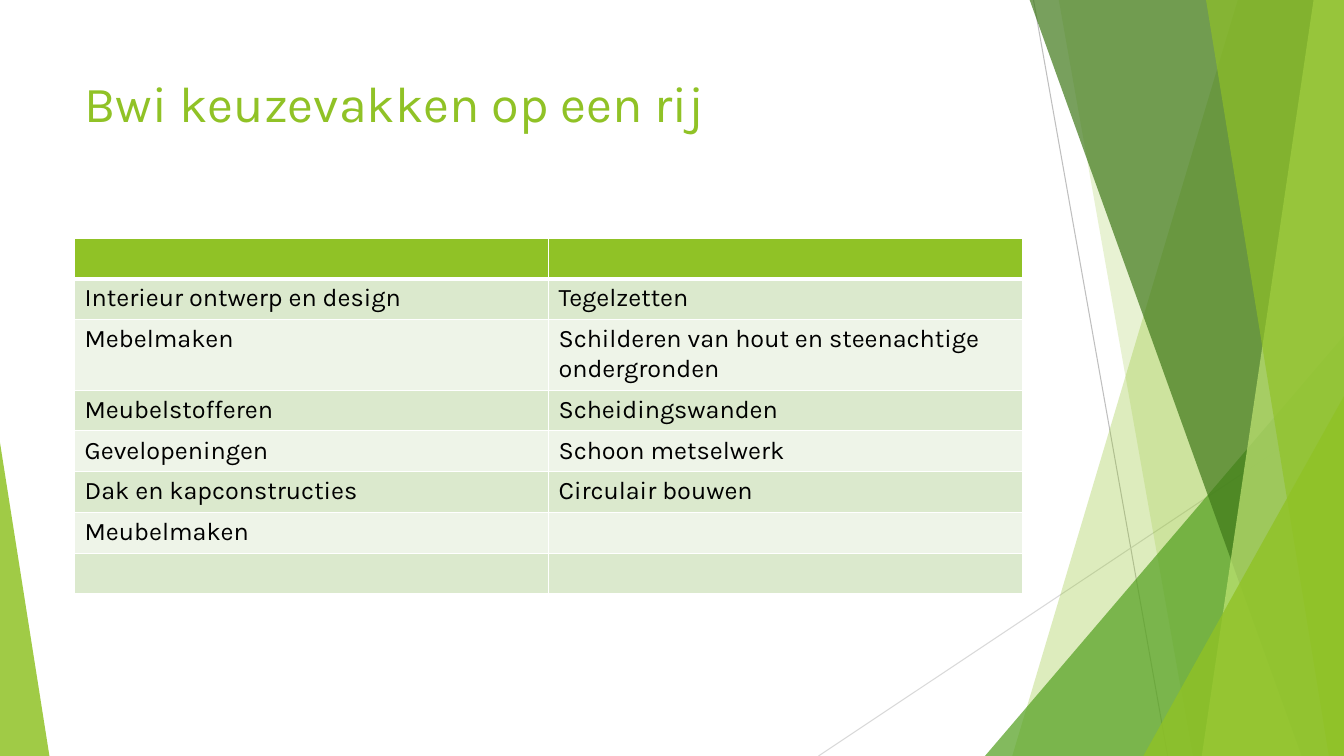
from lxml import etree
from pptx import Presentation
from pptx.dml.color import RGBColor
from pptx.enum.shapes import MSO_CONNECTOR, MSO_SHAPE
from pptx.enum.text import MSO_ANCHOR
from pptx.oxml.ns import qn
from pptx.util import Inches, Pt

STRAIGHT = MSO_CONNECTOR.STRAIGHT
TRIANGLE = MSO_SHAPE.ISOSCELES_TRIANGLE
TOP = MSO_ANCHOR.TOP

COLORS = {
    "lime": "90C226", "green": "54A021", "forest": "3F7819", "pale": "C0E474",
    "band_dark": "DBE9CD", "band_light": "EEF4E8", "white": "FFFFFF",
    "black": "000000", "line_dark": "BFBFBF", "line_light": "D9D9D9",
}
BLEED = -0.13  # the facets start just above the slide

# top left, bottom left, colour, opacity; each runs to the right edge
FACETS_BACK = [(92.12, 75.32, "lime", 30), (78.77, 88.75, "lime", 20)]
FACETS_FRONT = [
    (76.59, 96.85, "forest", 70),
    (97.75, 89.42, "pale", 70),
    (89.72, 98.87, "lime", 65),
]

SUBJECTS = [
    ("", ""),
    ("Interieur ontwerp en design", "Tegelzetten"),
    ("Mebelmaken", "Schilderen van hout en steenachtige ondergronden"),
    ("Meubelstofferen", "Scheidingswanden"),
    ("Gevelopeningen", "Schoon metselwerk"),
    ("Dak en kapconstructies", "Circulair bouwen"),
    ("Meubelmaken", ""),
    ("", ""),
]


def rgb(name):
    return RGBColor.from_string(COLORS[name])


class SlideBuilder:
    """Draws on one slide; lengths are percentages of its width and height."""

    def __init__(self, presentation, font="Karla"):
        self.width = presentation.slide_width
        self.height = presentation.slide_height
        self.font = font
        self.slide = presentation.slides.add_slide(presentation.slide_layouts[6])
        self.shapes = self.slide.shapes

    def x(self, share):
        return round(self.width * share / 100)

    def y(self, share):
        return round(self.height * share / 100)

    def box(self, left, top, width, height):
        return self.x(left), self.y(top), self.x(width), self.y(height)

    def paint(self, shape, color, opacity):
        shape.shadow.inherit = False
        shape.line.fill.background()
        shape.fill.solid()
        shape.fill.fore_color.rgb = rgb(color)
        for value in shape._element.spPr.iter(qn("a:srgbClr")):
            etree.SubElement(value, qn("a:alpha")).set("val", str(opacity * 1000))

    def line(self, start, end, color):
        connector = self.shapes.add_connector(
            STRAIGHT, self.x(start[0]), self.y(start[1]), self.x(end[0]), self.y(end[1]))
        connector.line.color.rgb = rgb(color)
        connector.line.width = Pt(0.75)
        etree.SubElement(connector._element.spPr, qn("a:effectLst"))

    def facet(self, top_left, bottom_left, color, opacity):
        builder = self.shapes.build_freeform(self.x(top_left), self.y(BLEED))
        corners = [(100, BLEED), (100, 100), (bottom_left, 100)]
        builder.add_line_segments([(self.x(x), self.y(y)) for x, y in corners])
        self.paint(builder.convert_to_shape(), color, opacity)

    def triangle(self, left, top, width, apex, color, opacity):
        """Add a triangle that stands on the bottom edge of the slide."""
        shape = self.shapes.add_shape(TRIANGLE, *self.box(left, top, width, 100 - top))
        shape.adjustments[0] = apex
        self.paint(shape, color, opacity)

    def add_text(self, frame, text, size=18, color="black"):
        run = frame.paragraphs[0].add_run()
        run.text = text
        run.font.name = self.font
        run.font.size = Pt(size)
        run.font.color.rgb = rgb(color)

    def title(self, text, left, top, width, height):
        frame = self.shapes.add_textbox(*self.box(left, top, width, height)).text_frame
        frame.word_wrap = True
        frame.vertical_anchor = TOP
        self.add_text(frame, text, size=36, color="lime")

    def border(self, cell, side, points):
        properties = cell._tc.get_or_add_tcPr()
        edge = etree.SubElement(properties, qn(f"a:ln{side}"), w=str(Pt(points)))
        fill = etree.SubElement(edge, qn("a:solidFill"))
        etree.SubElement(fill, qn("a:srgbClr"), val=COLORS["white"])

    def table(self, rows, left, top, width, height, row_height):
        graphic = self.shapes.add_table(
            len(rows), len(rows[0]), *self.box(left, top, width, row_height * len(rows)))
        graphic.height = self.y(height)
        for i, texts in enumerate(rows):
            color = "lime" if i == 0 else ("band_light", "band_dark")[i % 2]
            for j, text in enumerate(texts):
                cell = graphic.table.cell(i, j)
                for side in "LRTB":
                    header_edge = (i, side) in ((0, "B"), (1, "T"))
                    self.border(cell, side, 3 if header_edge else 1)
                cell.fill.solid()
                cell.fill.fore_color.rgb = rgb(color)
                if text:
                    self.add_text(cell.text_frame, text)


def main():
    presentation = Presentation()
    presentation.slide_width = Inches(13.33)
    presentation.slide_height = Inches(7.5)
    builder = SlideBuilder(presentation)

    builder.line((76.9, 0), (86.88, 100), "line_dark")
    builder.line((100, 53.7), (60.9, 100), "line_light")
    for facet in FACETS_BACK:
        builder.facet(*facet)
    builder.triangle(73.29, 44.4, 26.71, 1, "green", 72)
    for facet in FACETS_FRONT:
        builder.facet(*facet)
    builder.triangle(85.07, 52.4, 14.93, 1, "lime", 80)
    builder.triangle(0, 58.53, 3.68, 0, "lime", 85)

    builder.title("Bwi keuzevakken op een rij", 5.55, 8.93, 70.52, 12.8)
    builder.table(SUBJECTS, 5.55, 31.47, 70.52, 47.07, row_height=5.4)
    presentation.save("out.pptx")


if __name__ == "__main__":
    main()
